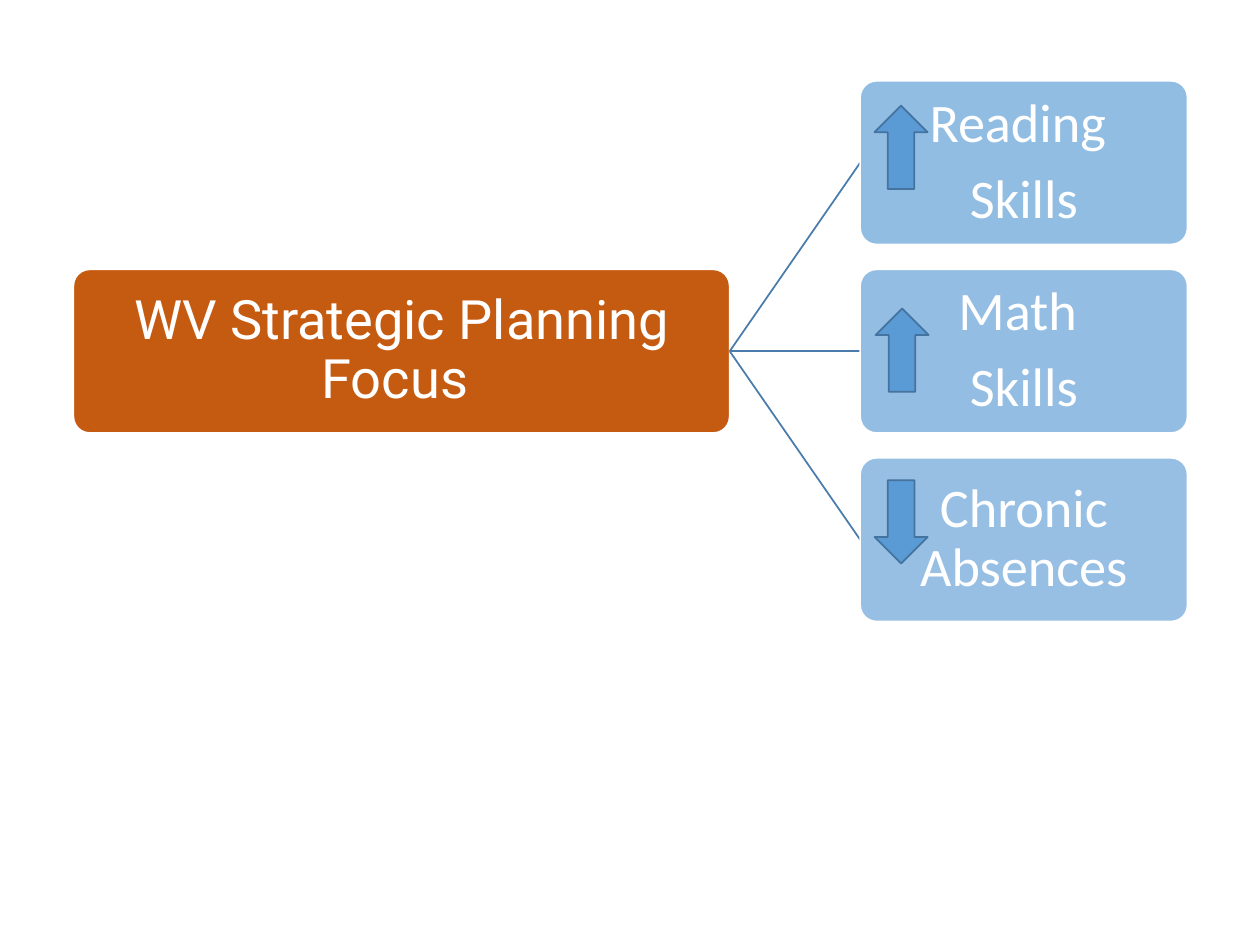
from dataclasses import dataclass

from lxml import etree
from pptx import Presentation
from pptx.dml.color import RGBColor
from pptx.enum.shapes import MSO_CONNECTOR, MSO_SHAPE
from pptx.enum.text import MSO_ANCHOR, PP_ALIGN
from pptx.oxml.ns import qn
from pptx.shapes.autoshape import Shape
from pptx.shapes.shapetree import SlideShapes
from pptx.util import Cm, Pt

ROUND = MSO_SHAPE.ROUNDED_RECTANGLE
ARROW = MSO_SHAPE.UP_ARROW
STRAIGHT = MSO_CONNECTOR.STRAIGHT
MIDDLE = MSO_ANCHOR.MIDDLE
CENTER = PP_ALIGN.CENTER


@dataclass(frozen=True)
class Theme:
    root: str = "C55A11"
    goal: str = "5B9BD5"
    edge: str = "43739E"
    link: str = "497CAB"
    white: str = "FFFFFF"
    head: str = "Roboto"
    body: str = "Calibri"
    size: float = 31
    gap: float = 10
    line: float = 1


@dataclass(frozen=True)
class Node:
    lines: tuple[str, ...]
    left: float
    top: float
    width: float
    fill: str
    font: str
    alpha: int = 100


@dataclass(frozen=True)
class Trend:
    left: float
    top: float
    turn: int = 0


THEME = Theme()
HIGH = 3.3
STEP = 3.8
TOP = 1.63
LEFT = 17.34

ROOT = Node(("WV Strategic Planning Focus ",), 1.48, TOP + STEP, 13.23,
            THEME.root, THEME.head)
GOALS = [
    Node(lines, LEFT, TOP + row * STEP, 6.6, THEME.goal, THEME.body, alpha)
    for row, (lines, alpha) in enumerate([
        (("Reading ", "Skills"), 66),
        (("Math ", "Skills"), 65),
        (("Chronic Absences",), 63),
    ])
]
TRENDS = [Trend(17.63, 2.13), Trend(17.65, 6.22), Trend(17.63, 9.68, 180)]


def paint(shape: Shape, fill: str, line: str) -> None:
    shape.shadow.inherit = False
    shape.fill.solid()
    shape.fill.fore_color.rgb = RGBColor.from_string(fill)
    shape.line.color.rgb = RGBColor.from_string(line)
    shape.line.width = Pt(THEME.line)


def fade(shape: Shape, alpha: int) -> None:
    """Set the opacity of a solid fill, in percent."""
    color = shape.fill._xPr.find(qn("a:solidFill"))[0]
    etree.SubElement(color, qn("a:alpha"), val=str(alpha * 1000))


def write(shape: Shape, node: Node) -> None:
    frame = shape.text_frame
    pad = Cm(0.05)
    look = {"word_wrap": True, "vertical_anchor": MIDDLE,
            "margin_left": pad, "margin_right": pad,
            "margin_top": pad, "margin_bottom": pad}
    for name, value in look.items():
        setattr(frame, name, value)
    frame.text = "\n".join(node.lines)
    style = {"alignment": CENTER, "line_spacing": 0.9,
             "space_after": Pt(THEME.gap)}
    for para in frame.paragraphs:
        for name, value in style.items():
            setattr(para, name, value)
        font = para.runs[0].font
        font.name, font.size = node.font, Pt(THEME.size)
        font.color.rgb = RGBColor.from_string(THEME.white)


def draw_node(shapes: SlideShapes, node: Node) -> None:
    box = shapes.add_shape(ROUND, Cm(node.left), Cm(node.top),
                           Cm(node.width), Cm(HIGH))
    box.adjustments[0] = 0.1
    paint(box, node.fill, THEME.white)
    if node.alpha < 100:
        fade(box, node.alpha)
    write(box, node)


def draw_link(shapes: SlideShapes, start: Node, end: Node) -> None:
    """Join the right side of one node to the left side of another."""
    link = shapes.add_connector(
        STRAIGHT, Cm(start.left + start.width), Cm(start.top + HIGH / 2),
        Cm(end.left), Cm(end.top + HIGH / 2))
    link.line.color.rgb = RGBColor.from_string(THEME.link)
    link.line.width = Pt(THEME.line)
    etree.SubElement(link._element.spPr, qn("a:effectLst"))


def draw_trend(shapes: SlideShapes, trend: Trend) -> None:
    arrow = shapes.add_shape(ARROW, Cm(trend.left), Cm(trend.top),
                             Cm(1.07), Cm(1.68))
    arrow.rotation = trend.turn
    paint(arrow, THEME.goal, THEME.edge)


def main() -> None:
    deck = Presentation()
    deck.slide_width, deck.slide_height = Cm(25.4), Cm(19.05)
    shapes = deck.slides.add_slide(deck.slide_layouts[6]).shapes
    draw_node(shapes, ROOT)
    for goal in GOALS:
        draw_link(shapes, ROOT, goal)
        draw_node(shapes, goal)
    for trend in TRENDS:
        draw_trend(shapes, trend)
    deck.save("out.pptx")


if __name__ == "__main__":
    main()
